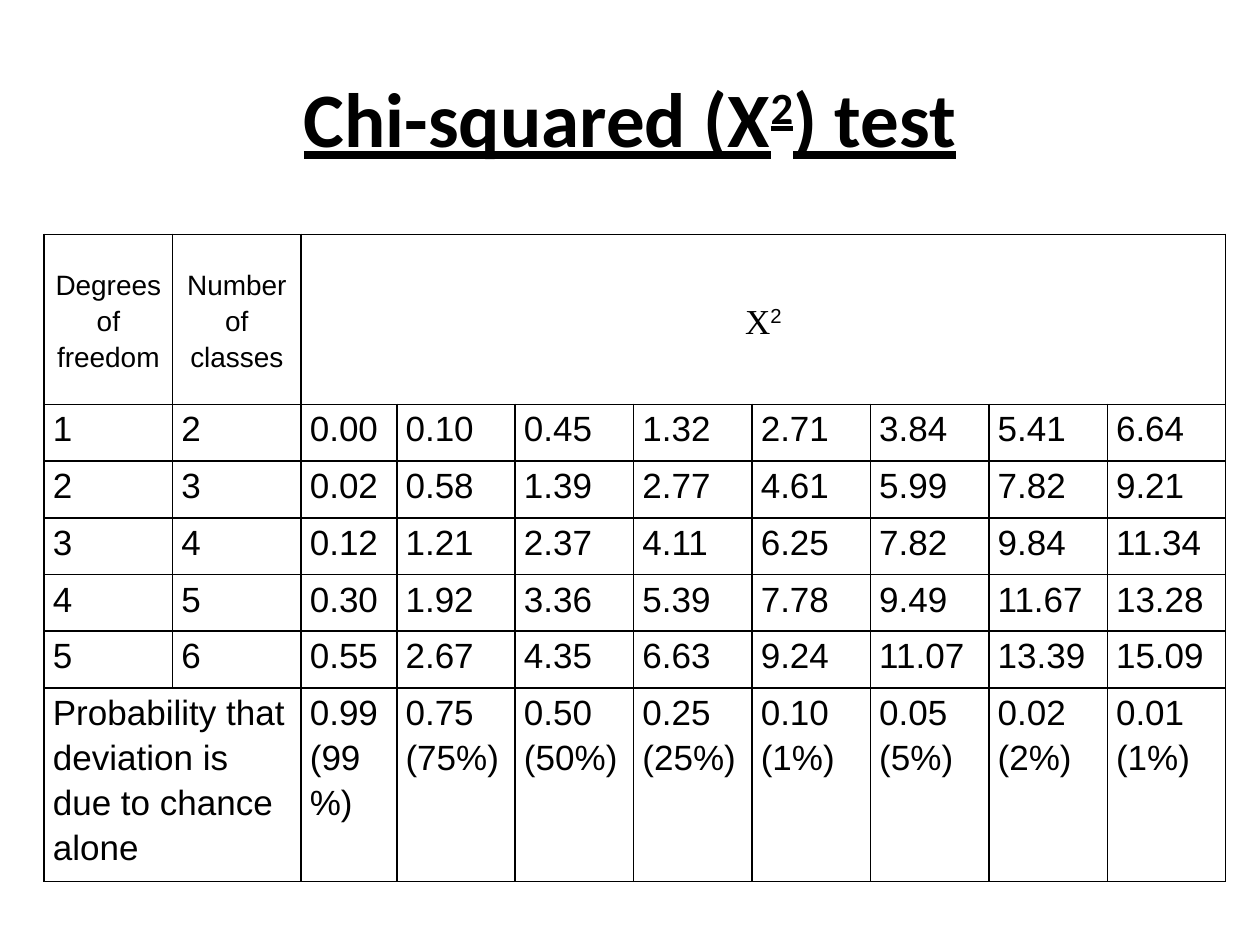
from lxml.etree import SubElement
from pptx import Presentation
from pptx.dml.color import RGBColor
from pptx.enum.text import MSO_ANCHOR as Anchor, PP_ALIGN as Align
from pptx.oxml.ns import qn
from pptx.util import Inches, Pt

COLORS = {"ink": "000000", "paper": "FFFFFF"}

presentation = Presentation()
presentation.slide_width, presentation.slide_height = Inches(10), Inches(7.5)
WIDTH, HEIGHT = presentation.slide_width, presentation.slide_height
slide = presentation.slides.add_slide(presentation.slide_layouts[6])


def write(paragraph, text, font="Arial", size=20, bold=False, underline=False,
          raised=False, align=Align.LEFT, line=None, after=None):
    """Add one formatted run to a paragraph and set the paragraph's format."""
    paragraph.alignment = align
    if line:
        paragraph.line_spacing = line
    if after:
        paragraph.space_after = Pt(after)
    run = paragraph.add_run()
    run.text = text
    run.font.name, run.font.size = font, Pt(size)
    run.font.bold, run.font.underline = bold, underline
    run.font.color.rgb = RGBColor.from_string(COLORS["ink"])
    if raised:
        run._r.get_or_add_rPr().set("baseline", "30000")


def draw_borders(cell, points=1):
    properties = cell._tc.get_or_add_tcPr()
    for side in ("lnL", "lnR", "lnT", "lnB"):
        border = SubElement(properties, qn(f"a:{side}"), w=str(Pt(points)))
        fill = SubElement(border, qn("a:solidFill"))
        SubElement(fill, qn("a:srgbClr"), val=COLORS["ink"])


# Title
title = slide.shapes.add_textbox(int(WIDTH * 0.05), int(HEIGHT * 0.04),
                                 int(WIDTH * 0.9), int(HEIGHT / 6))
title.text_frame.word_wrap = True
title.text_frame.vertical_anchor = Anchor.MIDDLE
for text, raised in (("Chi-squared (Χ", False), ("2", True), (") test", False)):
    write(title.text_frame.paragraphs[0], text, font="Calibri", size=44, bold=True,
          underline=True, raised=raised, align=Align.CENTER)

# Table contents: degrees of freedom, number of classes, then the critical values
rows = [
    ["Degrees of freedom", "Number of classes", "Χ"] + [""] * 7,
    "1 2 0.00 0.10 0.45 1.32 2.71 3.84 5.41 6.64".split(),
    "2 3 0.02 0.58 1.39 2.77 4.61 5.99 7.82 9.21".split(),
    "3 4 0.12 1.21 2.37 4.11 6.25 7.82 9.84 11.34".split(),
    "4 5 0.30 1.92 3.36 5.39 7.78 9.49 11.67 13.28".split(),
    "5 6 0.55 2.67 4.35 6.63 9.24 11.07 13.39 15.09".split(),
    ["Probability that deviation is due to chance alone", "",
     "0.99 (99%)", "0.75 (75%)", "0.50 (50%)", "0.25 (25%)",
     "0.10 (1%)", "0.05 (5%)", "0.02 (2%)", "0.01 (1%)"],
]

# Table grid, as shares of the slide
column_shares = [0.102] * 2 + [0.076] + [0.094] * 7
row_shares = [0.18] + [0.06] * 5 + [0.18]
table = slide.shapes.add_table(
    len(rows), len(column_shares), int(WIDTH * 0.035), int(HEIGHT * 0.248),
    int(WIDTH * sum(column_shares)), int(HEIGHT * sum(row_shares))).table
table.first_row = table.horz_banding = False
for column, share in zip(table.columns, column_shares):
    column.width = int(WIDTH * share)
for row, share in zip(table.rows, row_shares):
    row.height = int(HEIGHT * share)
table.cell(0, 2).merge(table.cell(0, 9))
table.cell(6, 0).merge(table.cell(6, 1))

# Cells
for row_index, values in enumerate(rows):
    header = row_index == 0
    for column_index, text in enumerate(values):
        cell = table.cell(row_index, column_index)
        cell.margin_left = cell.margin_right = Inches(0.07)
        cell.margin_top = cell.margin_bottom = 0
        cell.vertical_anchor = Anchor.MIDDLE if header else Anchor.TOP
        draw_borders(cell)
        cell.fill.solid()
        cell.fill.fore_color.rgb = RGBColor.from_string(COLORS["paper"])
        if not text:
            continue
        symbol = text == "Χ"
        layout = dict(align=Align.CENTER if header else Align.LEFT, line=1.15, after=10)
        paragraph = cell.text_frame.paragraphs[0]
        write(paragraph, text, font="Times New Roman" if symbol else "Arial",
              size=16 if header and not symbol else 20, **layout)
        if symbol:
            write(paragraph, "2", raised=True, **layout)

presentation.save("out.pptx")
